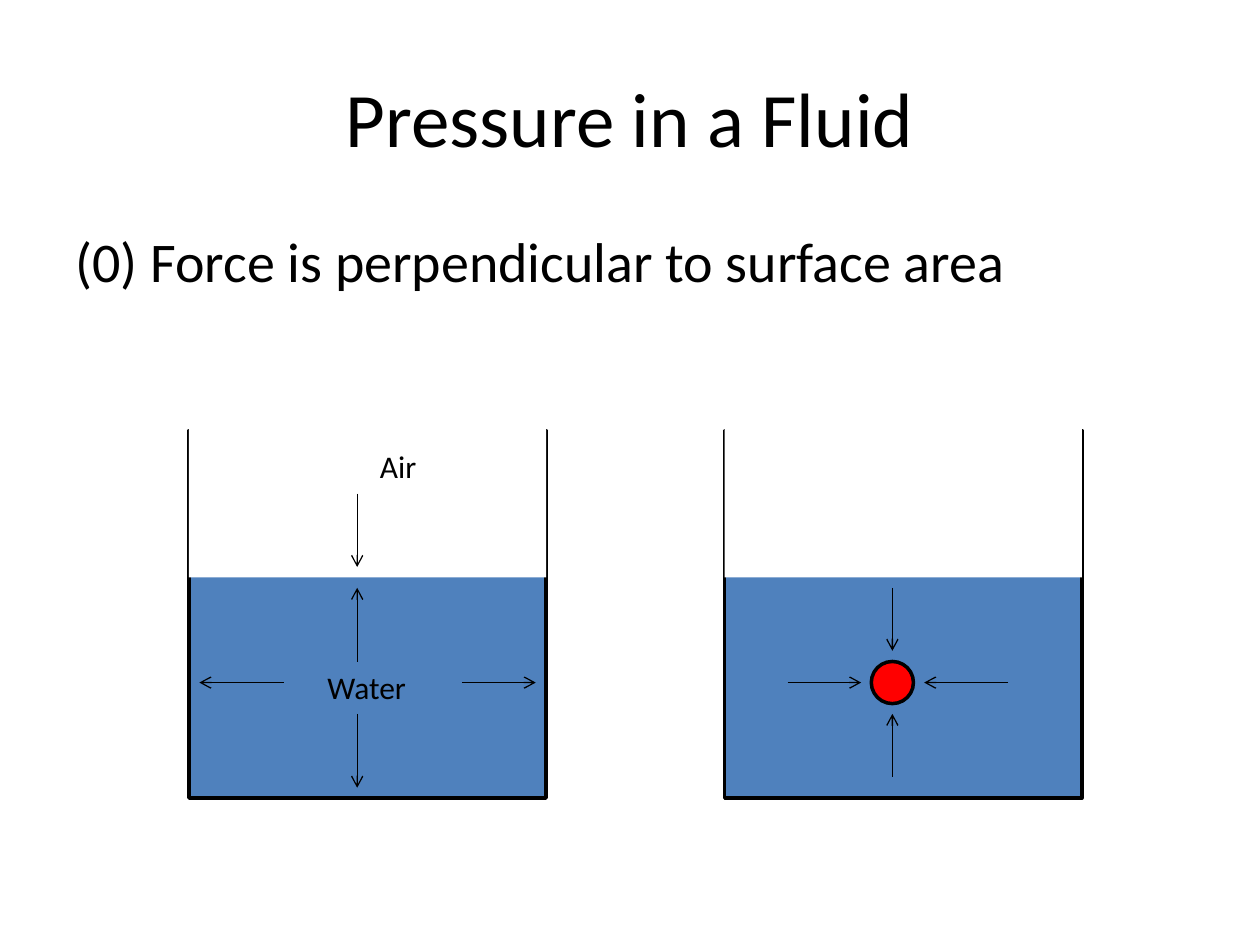
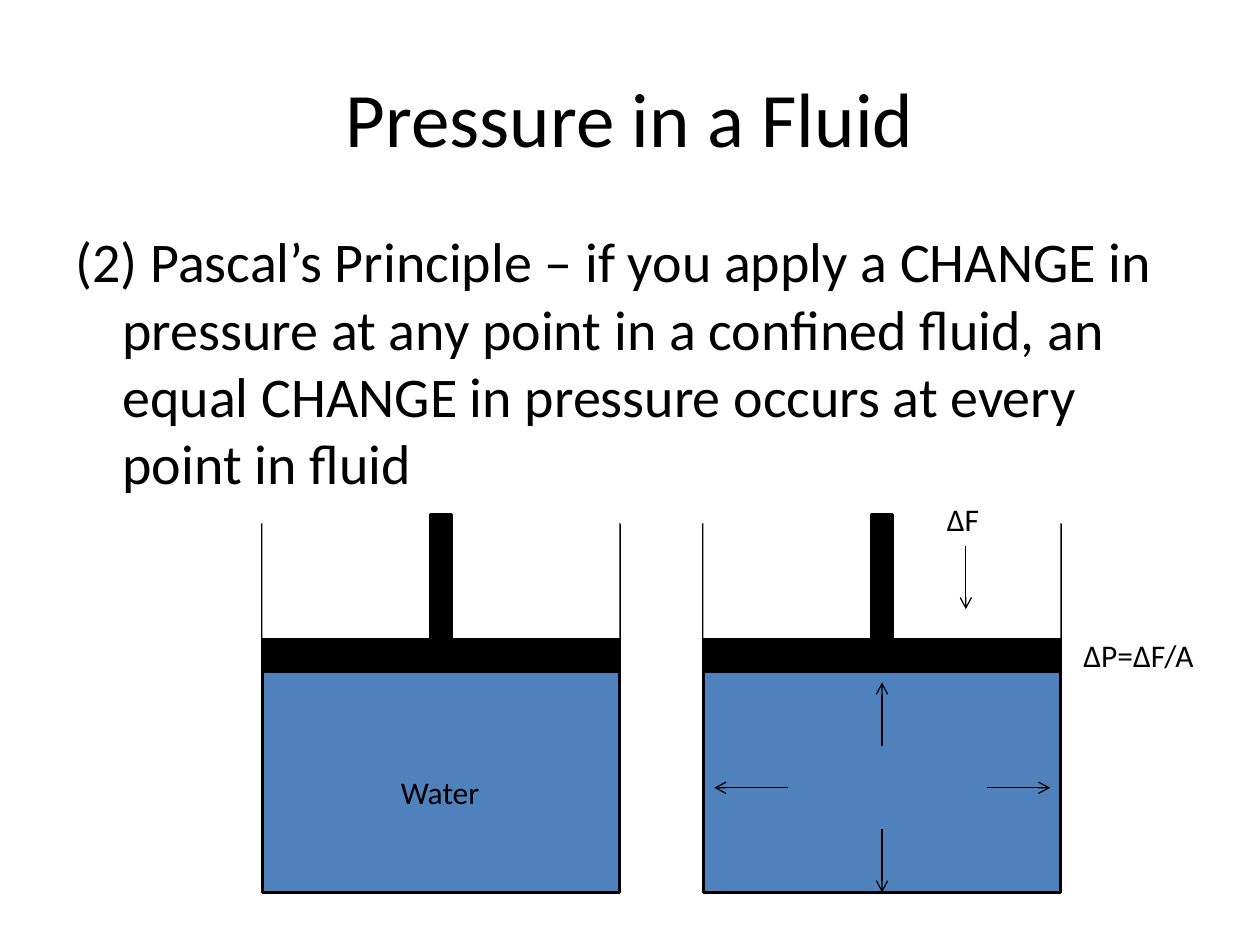
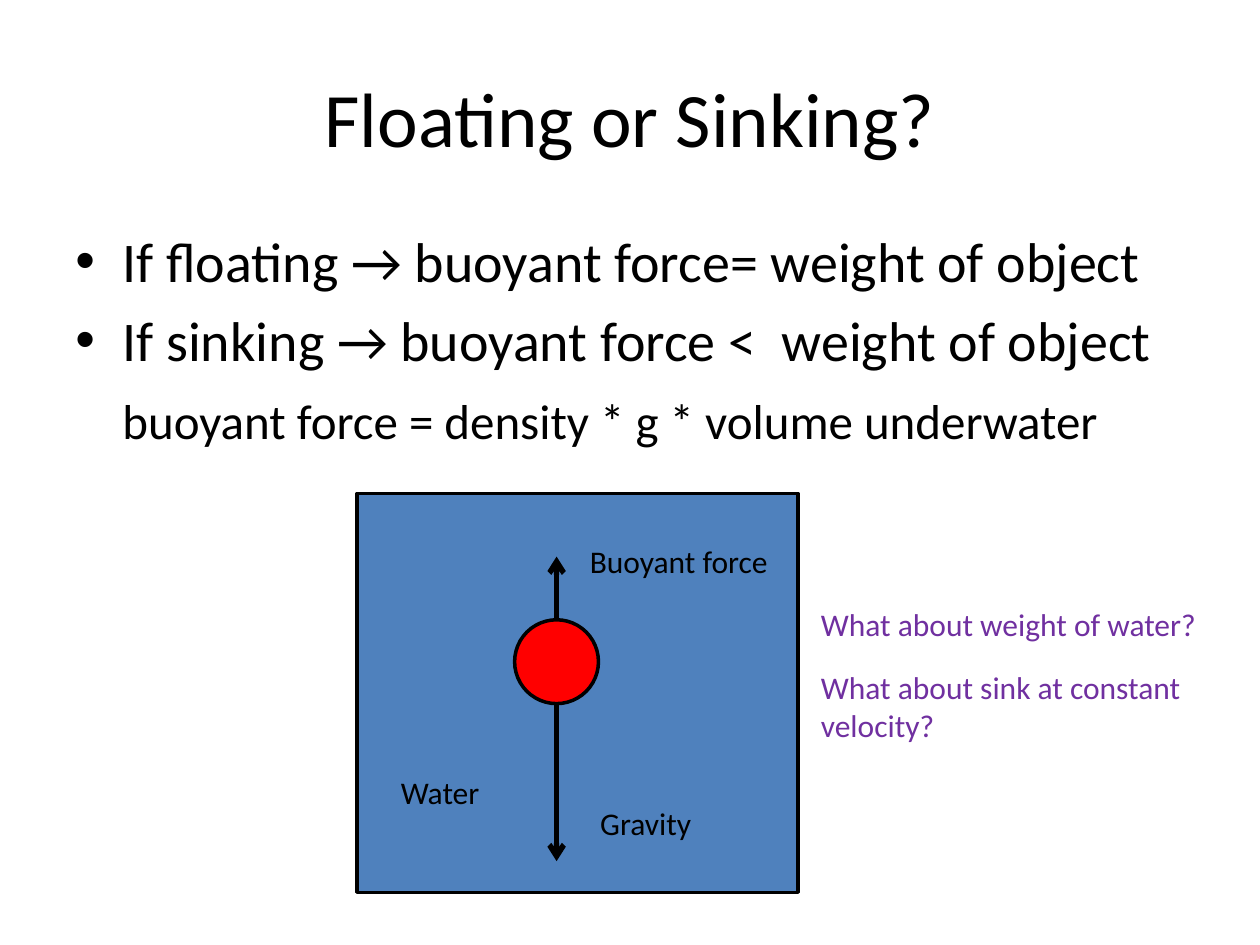
from dataclasses import dataclass

from lxml.etree import SubElement
from pptx import Presentation
from pptx.dml.color import RGBColor
from pptx.enum.shapes import MSO_CONNECTOR, MSO_SHAPE
from pptx.enum.text import MSO_ANCHOR, MSO_AUTO_SIZE, PP_ALIGN
from pptx.oxml.ns import qn
from pptx.util import Cm, Pt

# Shared look
COLORS = {
    "ink": "000000",
    "water": "4F81BD",
    "paper": "FFFFFF",
    "ball": "FF0000",
    "question": "7030A0",
}
TITLE_FORMAT = {"name": "Calibri", "size": Pt(44)}
BODY_FORMAT = {"name": "Calibri", "size": Pt(32)}
FORMULA_FORMAT = {"name": "Calibri", "size": Pt(28)}
LABEL_FORMAT = {"name": "Calibri", "size": Pt(18)}
LABEL_FRAME = {"word_wrap": False, "auto_size": MSO_AUTO_SIZE.SHAPE_TO_FIT_TEXT}
TITLE_BOX = {"left": Cm(1.27), "top": Cm(0.76), "width": Cm(22.86), "height": Cm(3.18)}

TANK_WIDTH, TANK_HEIGHT = 7.2, 7.41
AIR_RISE, AIR_HEIGHT = 0.64, 3.6
PLATE_DROP, PLATE_HEIGHT = 2.32, 0.64
ROD_RISE, ROD_WIDTH, ROD_HEIGHT = 0.21, 0.43, 2.54
BODY_INDENT = 0.95
BOTTOM_SIDE = 2


# Repeated elements, all lengths in centimetres
@dataclass(frozen=True)
class Block:
    left: float
    top: float
    width: float
    height: float
    fill: str
    outlined: bool = True
    preset: MSO_SHAPE = MSO_SHAPE.RECTANGLE


@dataclass(frozen=True)
class Tank:
    left: float
    top: float
    piston: bool = False


@dataclass(frozen=True)
class Force:
    x1: float
    y1: float
    x2: float
    y2: float
    weight: float = 0.75


@dataclass(frozen=True)
class Label:
    text: str
    left: float
    top: float
    width: float
    height: float = 1.02
    color: str = "ink"


@dataclass(frozen=True)
class Statement:
    text: str
    bullet: bool = False
    hanging: bool = True
    formula: bool = False
    space_before: float = 6.4


def rgb(color: str) -> RGBColor:
    return RGBColor.from_string(COLORS[color])


def apply(target, values: dict) -> None:
    for attribute, value in values.items():
        setattr(target, attribute, value)


def format_font(font, values: dict, color: str = "ink") -> None:
    apply(font, values)
    font.color.rgb = rgb(color)


def add_block(slide, block: Block):
    shape = slide.shapes.add_shape(
        block.preset, Cm(block.left), Cm(block.top), Cm(block.width), Cm(block.height))
    shape.shadow.inherit = False
    shape.fill.solid()
    shape.fill.fore_color.rgb = rgb(block.fill)
    if block.outlined:
        shape.line.color.rgb = rgb("ink")
        shape.line.width = Pt(2)
    else:
        shape.line.fill.background()
    return shape


def add_ball(slide, center_x: float, center_y: float, size: float) -> None:
    add_block(slide, Block(center_x - size / 2, center_y - size / 2, size, size,
                           "ball", preset=MSO_SHAPE.OVAL))


def add_tank(slide, tank: Tank):
    """Draw an open tank and return its water."""
    water = add_block(slide, Block(tank.left, tank.top, TANK_WIDTH, TANK_HEIGHT, "water"))
    add_block(slide, Block(tank.left, tank.top - AIR_RISE, TANK_WIDTH, AIR_HEIGHT,
                           "paper", outlined=False))
    if tank.piston:
        add_block(slide, Block(tank.left, tank.top + PLATE_DROP, TANK_WIDTH,
                               PLATE_HEIGHT, "ink"))
        add_block(slide, Block(tank.left + (TANK_WIDTH - ROD_WIDTH) / 2,
                               tank.top - ROD_RISE, ROD_WIDTH, ROD_HEIGHT, "ink"))
    return water


def add_force(slide, force: Force):
    arrow = slide.shapes.add_connector(
        MSO_CONNECTOR.STRAIGHT, Cm(force.x1), Cm(force.y1), Cm(force.x2), Cm(force.y2))
    arrow.line.color.rgb = rgb("ink")
    arrow.line.width = Pt(force.weight)
    properties = arrow.element.spPr
    SubElement(properties.find(qn("a:ln")), qn("a:tailEnd"), type="arrow")
    SubElement(properties, qn("a:effectLst"))
    return arrow


def add_label(slide, label: Label) -> None:
    box = slide.shapes.add_textbox(
        Cm(label.left), Cm(label.top), Cm(label.width), Cm(label.height))
    frame = box.text_frame
    apply(frame, LABEL_FRAME)
    frame.text = label.text
    for paragraph in frame.paragraphs:
        format_font(paragraph.runs[0].font, LABEL_FORMAT, label.color)


def add_title(slide, text: str) -> None:
    title = slide.shapes.title
    apply(title, TITLE_BOX)
    title.text_frame.text = text
    title.text_frame.vertical_anchor = MSO_ANCHOR.MIDDLE
    paragraph = title.text_frame.paragraphs[0]
    paragraph.alignment = PP_ALIGN.CENTER
    format_font(paragraph.runs[0].font, TITLE_FORMAT)


def add_body(slide, statements: list[Statement]) -> None:
    box = slide.shapes.add_textbox(Cm(1.27), Cm(4.45), Cm(22.86), Cm(12.57))
    frame = box.text_frame
    frame.word_wrap = True
    for index, statement in enumerate(statements):
        paragraph = frame.add_paragraph() if index else frame.paragraphs[0]
        paragraph.space_before = Pt(statement.space_before)
        run = paragraph.add_run()
        run.text = statement.text
        format_font(run.font, FORMULA_FORMAT if statement.formula else BODY_FORMAT)
        properties = paragraph._p.get_or_add_pPr()
        properties.set("marL", str(Cm(BODY_INDENT)))
        properties.set("indent", str(Cm(-BODY_INDENT if statement.hanging else 0)))
        if statement.bullet:
            SubElement(properties, qn("a:buFont"), typeface="Arial")
            SubElement(properties, qn("a:buChar"), char="•")


def add_slide(deck, title: str, statements: list[Statement]):
    slide = deck.slides.add_slide(deck.slide_layouts[5])
    add_title(slide, title)
    add_body(slide, statements)
    return slide


def add_all(slide, draw, items: list) -> None:
    for item in items:
        draw(slide, item)


def build_perpendicular_force(deck) -> None:
    slide = add_slide(deck, "Pressure in a Fluid",
                      [Statement("(0) Force is perpendicular to surface area")])
    add_all(slide, add_tank, [Tank(3.81, 8.68), Tank(14.61, 8.68)])
    add_all(slide, add_force, [
        # Air and water pushing on surface and walls
        Force(7.2, 9.95, 7.2, 11.43),
        Force(7.2, 14.39, 7.2, 15.88),
        Force(5.72, 13.76, 4.02, 13.76),
        Force(9.31, 13.76, 10.8, 13.76),
        Force(7.2, 13.34, 7.2, 11.85),
        # Water pushing on the ball
        Force(17.99, 15.66, 17.99, 14.39),
        Force(20.32, 13.76, 18.63, 13.76),
        Force(15.88, 13.76, 17.36, 13.76),
        Force(17.99, 11.85, 17.99, 13.12),
    ])
    add_all(slide, add_label, [
        Label("Air", 7.41, 8.89, 1.24),
        Label("Water", 6.35, 13.34, 2.11),
    ])
    add_ball(slide, 17.99, 13.76, 0.85)


def build_pascal(deck) -> None:
    slide = add_slide(deck, "Pressure in a Fluid", [Statement(
        "(2) Pascal’s Principle – if you apply a CHANGE in pressure at any point in a "
        "confined fluid, an equal CHANGE in pressure occurs at every point in fluid")])
    add_tank(slide, Tank(5.29, 10.58, piston=True))
    pressed_water = add_tank(slide, Tank(14.18, 10.58, piston=True))
    add_all(slide, add_force, [
        Force(19.47, 11, 19.47, 12.28),
        Force(17.78, 15.03, 17.78, 13.76),
        Force(19.9, 15.88, 21.17, 15.88),
        Force(15.88, 15.88, 14.4, 15.88),
    ])
    floor_force = add_force(slide, Force(17.78, 16.72, 17.78, 17.99))
    floor_force.end_connect(pressed_water, BOTTOM_SIDE)
    add_all(slide, add_label, [
        Label("Water", 7.83, 15.45, 2.11),
        Label("ΔF", 18.84, 9.95, 1.17),
        Label("ΔP=ΔF/A", 21.59, 12.7, 2.75),
    ])


def build_floating(deck) -> None:
    slide = add_slide(deck, "Floating or Sinking?", [
        Statement("If floating → buoyant force= weight of object", bullet=True),
        Statement("If sinking → buoyant force <  weight of object", bullet=True),
        Statement("buoyant force = density * g * volume underwater",
                  hanging=False, formula=True, space_before=10),
    ])
    add_block(slide, Block(7.2, 9.95, 8.89, 8.04, "water"))
    add_all(slide, add_force, [
        Force(11.22, 13.55, 11.22, 17.36, weight=3),
        Force(11.22, 13.34, 11.22, 11.22, weight=3),
    ])
    add_ball(slide, 11.22, 13.34, 1.69)
    add_all(slide, add_label, [
        Label("Buoyant force", 11.64, 10.8, 4.14),
        Label("Gravity", 11.85, 16.08, 2.37),
        Label("Water", 7.83, 15.45, 2.11),
        Label("What about weight of water?", 16.3, 12.07, 8.15, color="question"),
        Label("What about sink at constant\nvelocity?", 16.3, 13.34, 7.85, 1.8,
              color="question"),
    ])


def main() -> None:
    deck = Presentation()
    deck.slide_width, deck.slide_height = Cm(25.4), Cm(19.05)
    build_perpendicular_force(deck)
    build_pascal(deck)
    build_floating(deck)
    deck.save("out.pptx")


if __name__ == "__main__":
    main()
